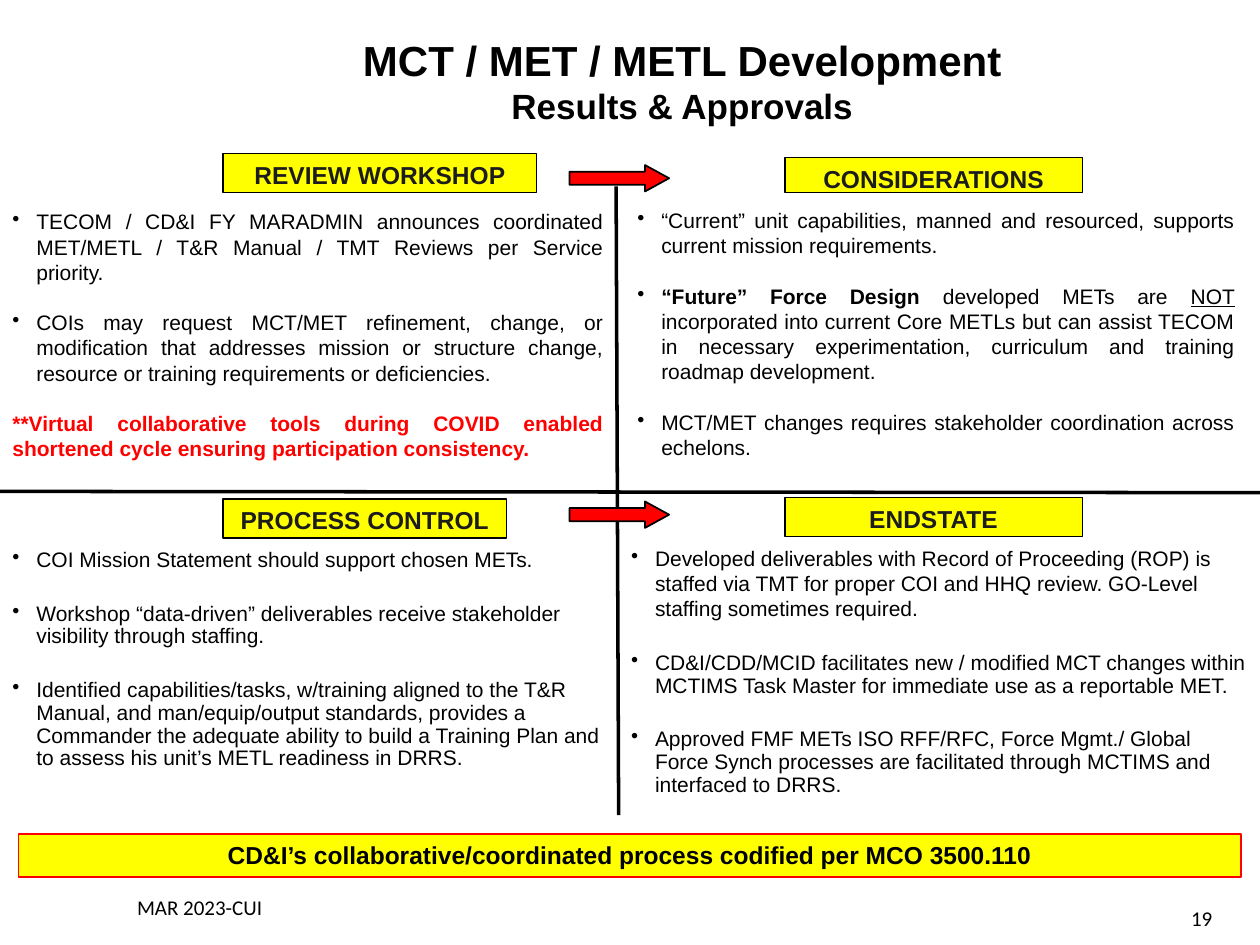
import pptx
import pptx.util
import pptx.dml.color
import pptx.enum.shapes
import pptx.enum.text
import pptx.oxml.ns
from lxml import etree

ALIGN = pptx.enum.text.PP_ALIGN
ANCHOR = pptx.enum.text.MSO_ANCHOR
SHAPE = pptx.enum.shapes.MSO_SHAPE
Inches = pptx.util.Inches
Pt = pptx.util.Pt

COLORS = {"black": "000000", "heading": "1C1C1C", "red": "FF0000", "yellow": "FFFF00"}
WIDTH, HEIGHT = 10, 7.5
INDENT = 0.19
LOOSE = {"align": ALIGN.JUSTIFY, "line": 1.0, "gap": 14.4}
TIGHT = {"align": ALIGN.LEFT, "line": 0.9, "gap": 17.8}

TITLE = [("MCT / MET / METL Development", 24), ("Results & Approvals", 20)]

QUADRANTS = [
    {
        "heading": "REVIEW WORKSHOP", "heading_box": (1.77, 1.22, 2.49, 0.31),
        "box": (0, 1.61, 4.89, 2.44), "style": LOOSE,
        "points": [
            "TECOM / CD&I FY MARADMIN announces coordinated MET/METL / T&R Manual / TMT Reviews per Service priority.",
            "COIs may request MCT/MET refinement, change, or modification that addresses mission or structure change, "
            "resource or training requirements or deficiencies.",
        ],
        "note": "**Virtual collaborative tools during COVID enabled shortened cycle ensuring participation consistency.",
    },
    {
        "heading": "CONSIDERATIONS", "heading_box": (6.23, 1.25, 2.36, 0.28),
        "box": (4.96, 1.6, 4.94, 2.42), "style": LOOSE,
        "points": [
            "“Current” unit capabilities, manned and resourced, supports current mission requirements.",
            [
                ("“Future” Force Design ", "bold"), ("developed METs are ", ""), ("NOT", "underline"),
                (" incorporated into current Core METLs but can assist TECOM in necessary experimentation, "
                 "curriculum and training roadmap development.", ""),
            ],
            "MCT/MET changes requires stakeholder coordination across echelons.",
        ],
    },
    {
        "heading": "PROCESS CONTROL", "heading_box": (1.77, 3.96, 2.25, 0.31),
        "box": (0, 4.31, 4.92, 2.54), "style": TIGHT,
        "points": [
            "COI Mission Statement should support chosen METs.",
            "Workshop “data-driven” deliverables receive stakeholder visibility through staffing.",
            "Identified capabilities/tasks, w/training aligned to the T&R Manual, and man/equip/output standards, "
            "provides a Commander the adequate ability to build a Training Plan and to assess his unit’s METL "
            "readiness in DRRS.",
        ],
    },
    {
        "heading": "ENDSTATE", "heading_box": (6.23, 3.95, 2.36, 0.31),
        "box": (4.91, 4.28, 5.09, 2.25), "style": TIGHT, "first_line": 1.0,
        "points": [
            "Developed deliverables with Record of Proceeding (ROP) is staffed via TMT for proper COI and HHQ review. "
            "GO-Level staffing sometimes required.",
            "CD&I/CDD/MCID facilitates new / modified MCT changes within MCTIMS Task Master for immediate use as a "
            "reportable MET.",
            "Approved FMF METs ISO RFF/RFC, Force Mgmt./ Global Force Synch processes are facilitated through MCTIMS "
            "and interfaced to DRRS.",
        ],
    },
]

DIVIDERS = [(4.89, 1.48, 4.91, 6.47), (0, 3.9, WIDTH, 3.91)]
ARROW_TOPS = [1.31, 3.98]
BANNER = ("CD&I’s collaborative/coordinated process codified per MCO 3500.110", (0.15, 6.62, 9.7, 0.34))
FOOTERS = [
    ("MAR 2023-CUI", (0, 7, 3.17, 0.4), ALIGN.CENTER),
    ("19", (7.39, 7.09, 2.33, 0.4), ALIGN.RIGHT),
]


def rgb(name):
    return pptx.dml.color.RGBColor.from_string(COLORS[name])


def inches(box):
    return [Inches(length) for length in box]


def format_font(font, size, color="black", bold=False, name="Arial"):
    font.name = name
    font.size = Pt(size)
    font.bold = bold
    font.color.rgb = rgb(color)


def add_filled(slide, kind, box, fill, line, line_width):
    shape = slide.shapes.add_shape(kind, *inches(box))
    shape.shadow.inherit = False
    shape.fill.solid()
    shape.fill.fore_color.rgb = rgb(fill)
    shape.line.color.rgb = rgb(line)
    shape.line.width = Pt(line_width)
    return shape


def add_label(slide, text, box, line, color):
    shape = add_filled(slide, SHAPE.RECTANGLE, box, "yellow", line, 0.75)
    frame = shape.text_frame
    frame.vertical_anchor = ANCHOR.TOP
    frame.text = text
    frame.paragraphs[0].alignment = ALIGN.CENTER
    format_font(frame.paragraphs[0].runs[0].font, 14, color, bold=True)


def add_text_box(slide, box):
    frame = slide.shapes.add_textbox(*inches(box)).text_frame
    frame.word_wrap = True
    return frame


def add_bullet(paragraph):
    properties = paragraph._p.get_or_add_pPr()
    properties.set("marL", str(Inches(INDENT)))
    properties.set("indent", str(-Inches(INDENT)))
    etree.SubElement(properties, pptx.oxml.ns.qn("a:buChar")).set("char", "•")


def add_quadrant_text(slide, quadrant):
    frame = add_text_box(slide, quadrant["box"])
    style = quadrant["style"]
    note = quadrant.get("note")
    entries = quadrant["points"] + ([note] if note else [])
    for index, entry in enumerate(entries):
        paragraph = frame.add_paragraph() if index else frame.paragraphs[0]
        is_note = entry is note
        if not is_note:
            add_bullet(paragraph)
        paragraph.alignment = style["align"]
        paragraph.line_spacing = style["line"] if index else quadrant.get("first_line", style["line"])
        paragraph.space_before = Pt(style["gap"] if index else 0)
        parts = [(entry, "bold" if is_note else "")] if isinstance(entry, str) else entry
        for text, emphasis in parts:
            run = paragraph.add_run()
            run.text = text
            format_font(run.font, 12, "red" if is_note else "black", emphasis == "bold")
            if emphasis == "underline":
                run.font.underline = True


def add_divider(slide, ends):
    line = slide.shapes.add_connector(pptx.enum.shapes.MSO_CONNECTOR.STRAIGHT, *inches(ends))
    line.line.color.rgb = rgb("black")
    line.line.width = Pt(2)
    etree.SubElement(line._element.spPr, pptx.oxml.ns.qn("a:effectLst"))


def format_title(title):
    title.left, title.top, title.width, title.height = inches((1.58, 0.22, 7.67, 0.84))
    frame = title.text_frame
    frame.auto_size = pptx.enum.text.MSO_AUTO_SIZE.NONE
    frame.vertical_anchor = ANCHOR.MIDDLE
    frame.text = "\n".join(text for text, size in TITLE)
    for paragraph, (text, size) in zip(frame.paragraphs, TITLE):
        paragraph.alignment = ALIGN.CENTER
        paragraph.space_before = Pt(0)
        format_font(paragraph.runs[0].font, size, bold=True)


def main():
    presentation = pptx.Presentation()
    presentation.slide_width, presentation.slide_height = inches((WIDTH, HEIGHT))
    slide = presentation.slides.add_slide(presentation.slide_layouts[5])
    format_title(slide.shapes.title)
    for quadrant in QUADRANTS:
        add_quadrant_text(slide, quadrant)
    add_label(slide, *BANNER, "red", "black")
    for ends in DIVIDERS:
        add_divider(slide, ends)
    for quadrant in QUADRANTS:
        add_label(slide, quadrant["heading"], quadrant["heading_box"], "black", "heading")
    for top in ARROW_TOPS:
        arrow = add_filled(slide, SHAPE.RIGHT_ARROW, (4.52, top, 0.79, 0.21), "red", "black", 1)
        arrow.adjustments[1] = 0.91
    for text, box, align in FOOTERS:
        frame = add_text_box(slide, box)
        frame.vertical_anchor = ANCHOR.MIDDLE
        frame.text = text
        frame.paragraphs[0].alignment = align
        format_font(frame.paragraphs[0].runs[0].font, 12, name="Calibri")
    presentation.save("out.pptx")


if __name__ == "__main__":
    main()
